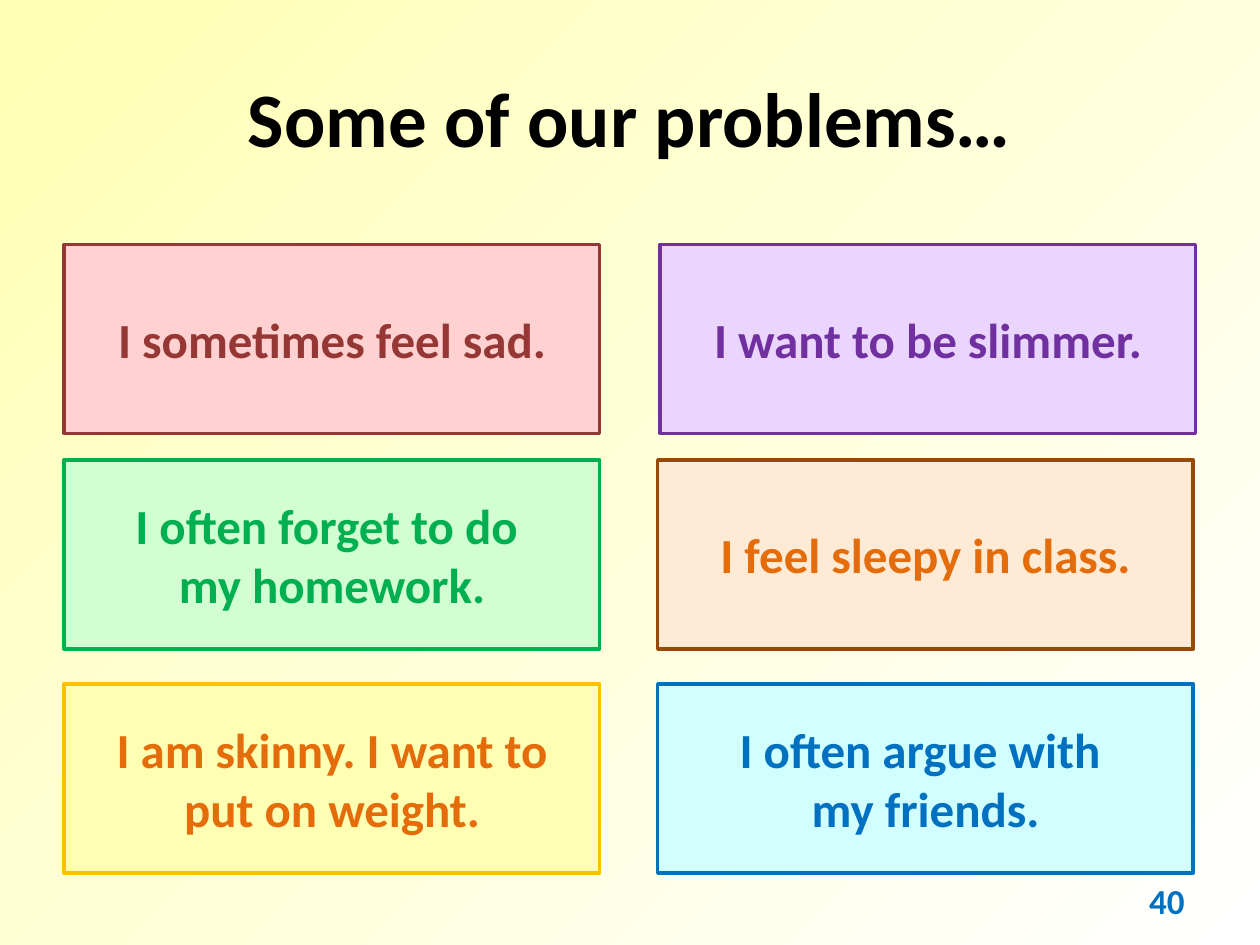
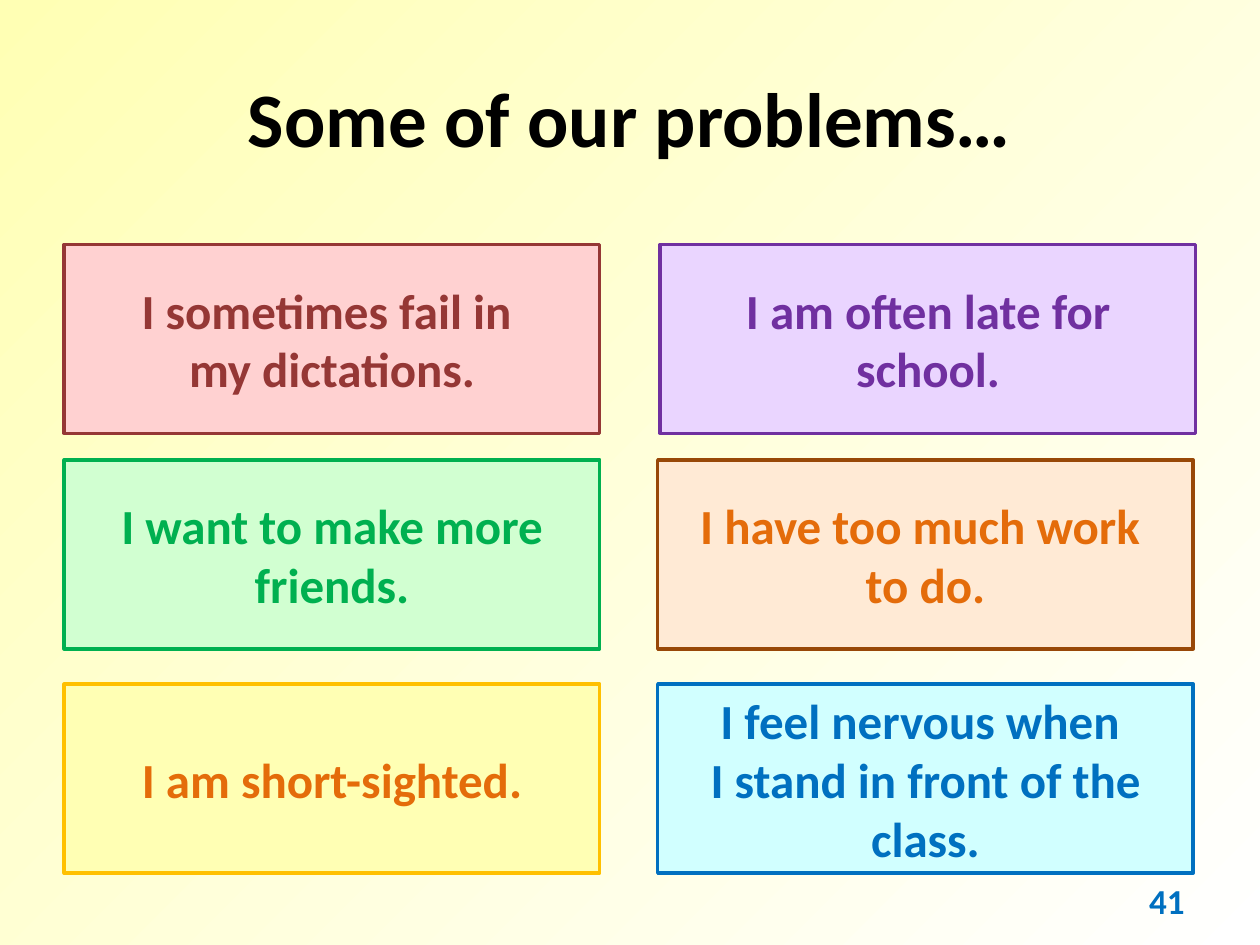
"""Build two slides that list common student problems in coloured cards."""
from dataclasses import dataclass

from pptx import Presentation
from pptx.dml.color import RGBColor
from pptx.enum.shapes import MSO_SHAPE
from pptx.enum.text import MSO_ANCHOR, PP_ALIGN
from pptx.presentation import Presentation as Deck
from pptx.shapes.autoshape import Shape
from pptx.slide import Slide
from pptx.util import Pt

COLOURS = {
    "black": "000000", "white": "FFFFFF", "cream": "FFFFB4",
    "rose": "FFD1D1", "maroon": "953735",
    "lilac": "EAD5FF", "purple": "7030A0",
    "mint": "D1FFD1", "green": "00B050",
    "peach": "FFEAD5", "brown": "984807", "orange": "E46C0A",
    "gold": "FFC000", "aqua": "D1FFFF", "blue": "0070C0",
}
FONT = "Calibri"
TITLE = "Some of our problems…"
FIRST_PAGE_NUMBER = 40
CARD_WIDTH, CARD_HEIGHT = 306, 108
LEFT_COLUMN, RIGHT_COLUMN, TOP_RIGHT = 36.72, 375.84, 377.28
ROW_TOPS = (139.68, 262.8, 390.96)


@dataclass(frozen=True)
class TextStyle:
    size: float
    colour: str
    align: PP_ALIGN = PP_ALIGN.CENTER


@dataclass(frozen=True)
class Card:
    left: float
    top: float
    fill: str
    line: str
    text: str


CARDS = (
    Card(LEFT_COLUMN, ROW_TOPS[0], "rose", "maroon", "maroon"),
    Card(TOP_RIGHT, ROW_TOPS[0], "lilac", "purple", "purple"),
    Card(LEFT_COLUMN, ROW_TOPS[1], "mint", "green", "green"),
    Card(RIGHT_COLUMN, ROW_TOPS[1], "peach", "brown", "orange"),
    Card(LEFT_COLUMN, ROW_TOPS[2], "cream", "gold", "orange"),
    Card(RIGHT_COLUMN, ROW_TOPS[2], "aqua", "blue", "blue"),
)
PROBLEM_PAGES = (
    (
        "I sometimes feel sad.",
        "I want to be slimmer.",
        "I often forget to do \nmy homework.",
        "I feel sleepy in class.",
        "I am skinny. I want to put on weight.",
        "I often argue with \nmy friends.",
    ),
    (
        "I sometimes fail in \nmy dictations.",
        "I am often late for school.",
        "I want to make more friends.",
        "I have too much work \nto do.",
        "I am short-sighted.",
        "I feel nervous when \nI stand in front of the class.",
    ),
)
TITLE_STYLE = TextStyle(44, "black")
NUMBER_STYLE = TextStyle(20, "blue", PP_ALIGN.RIGHT)


def colour(name: str) -> RGBColor:
    """Return the named colour."""
    return RGBColor.from_string(COLOURS[name])


def write(box: Shape, text: str, style: TextStyle) -> None:
    """Write bold text in the middle of a box, one run per line."""
    frame = box.text_frame
    frame.word_wrap = True
    frame.vertical_anchor = MSO_ANCHOR.MIDDLE
    para = frame.paragraphs[0]
    para.alignment = style.align
    for index, line in enumerate(text.split("\n")):
        if index:
            para.add_line_break()
        span = para.add_run()
        span.text = line
        span.font.name = FONT
        span.font.size = Pt(style.size)
        span.font.bold = True
        span.font.color.rgb = colour(style.colour)


def paint_background(page: Slide) -> None:
    """Fade the page from cream at top left to white at bottom right."""
    fill = page.background.fill
    fill.gradient()
    fill.gradient_angle = 315
    for stop, name, position in zip(fill.gradient_stops, ("cream", "white"), (0, 1)):
        stop.color.rgb = colour(name)
        stop.position = position


def add_card(page: Slide, card: Card, problem: str) -> None:
    """Draw one outlined card with its problem."""
    box = page.shapes.add_shape(
        MSO_SHAPE.RECTANGLE, Pt(card.left), Pt(card.top), Pt(CARD_WIDTH), Pt(CARD_HEIGHT)
    )
    box.shadow.inherit = False
    box.fill.solid()
    box.fill.fore_color.rgb = colour(card.fill)
    box.line.color.rgb = colour(card.line)
    box.line.width = Pt(2)
    write(box, problem, TextStyle(28, card.text))


def add_page(deck: Deck, number: int, problems: tuple[str, ...]) -> None:
    """Add a page with its title, number and cards."""
    page = deck.slides.add_slide(deck.slide_layouts[6])
    paint_background(page)
    title = page.shapes.add_textbox(Pt(36), Pt(21.6), Pt(648), Pt(90))
    write(title, TITLE, TITLE_STYLE)
    footer = page.shapes.add_textbox(Pt(516.24), Pt(500.4), Pt(167.76), Pt(28.8))
    write(footer, str(number), NUMBER_STYLE)
    for card, problem in zip(CARDS, problems):
        add_card(page, card, problem)


def main() -> None:
    """Build and save the deck."""
    deck = Presentation()
    deck.slide_width, deck.slide_height = Pt(720), Pt(540)
    for number, problems in enumerate(PROBLEM_PAGES, FIRST_PAGE_NUMBER):
        add_page(deck, number, problems)
    deck.save("out.pptx")


if __name__ == "__main__":
    main()
